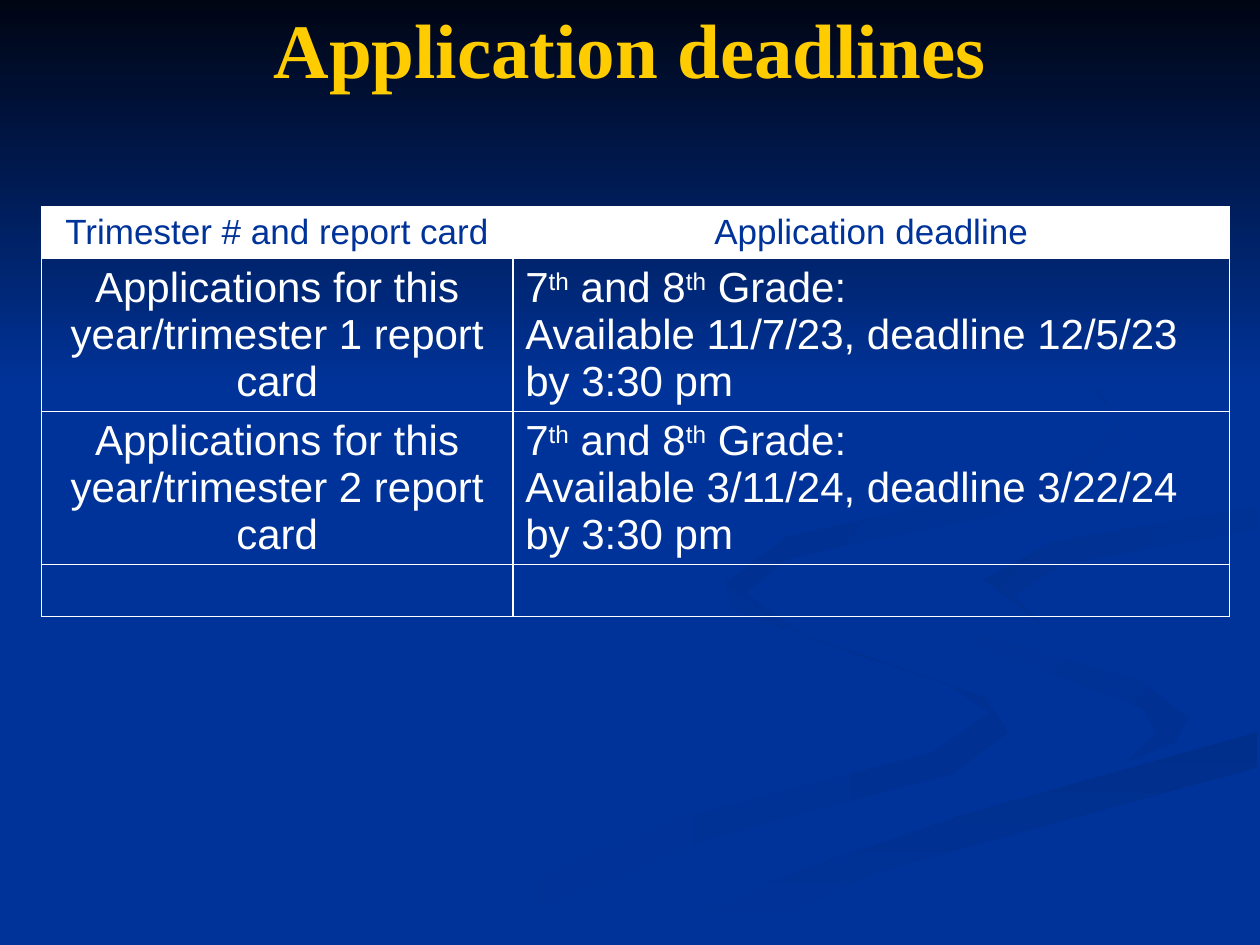
from lxml.etree import SubElement
from pptx import Presentation
from pptx.dml.color import RGBColor
from pptx.enum.shapes import MSO_SHAPE
from pptx.enum.text import MSO_ANCHOR as ANCHOR, PP_ALIGN as ALIGN
from pptx.oxml.ns import qn
from pptx.util import Inches, Pt

COLORS = {"blue": "003399", "night": "000514", "white": "FFFFFF", "gold": "FFCC00",
          "shade1": "003092", "shade2": "002E8B", "shade3": "003090", "shade4": "002F8D"}

TITLE = "Application deadlines"
HEADER = ["Trimester # and report card", "Application deadline"]
# Text between carets is superscript.
GRADES = "7^th^ and 8^th^ Grade:"
TRIMESTERS = [
    (1, "11/7/23", "12/5/23"),
    (2, "3/11/24", "3/22/24"),
]
COL_WIDTHS = [3.74, 5.69]
ROW_HEIGHTS = [0.41, 1.21, 1.21, 0.41]

# Ribbons, back to front: (first color, last color, clockwise angle, outline)
RIBBONS = [
    ("blue", "shade1", 0, [
        (7.81, 5.53), (6.42, 5.07), (5.75, 4.59), (5.81, 4.84), (7.52, 5.43), (7.86, 5.66),
        (7.39, 5.98), (5.39, 6.49), (3, 7.49), (3.61, 7.49), (5.64, 6.65), (7.56, 6.14),
        (8, 5.81)]),
    ("blue", "shade1", 45, [
        (9.43, 5.7), (9.05, 5.4), (7.58, 4.98), (7.24, 4.64), (7.46, 5), (8.38, 5.36),
        (9.07, 5.62), (9.18, 5.81), (8.94, 6.05), (9.32, 5.89)]),
    ("shade2", "blue", 90, [
        (5.03, 7.49), (5.71, 7.49), (6.95, 6.92), (9.98, 6.09), (9.98, 5.81), (7.64, 6.47),
        (6.3, 6.93)]),
    ("shade3", "blue", 45, [
        (7.81, 4.6), (8.26, 4.96), (8.05, 4.72), (8.43, 4.48), (9.98, 4.2), (9.98, 4.02),
        (8.35, 4.3)]),
    ("shade4", "blue", 45, [
        (6.83, 4.3), (8.25, 4.02), (8.94, 3.44), (8.43, 2.75), (7.62, 2.33), (8.62, 2.92),
        (8.89, 3.35), (8.42, 3.78), (6.25, 4.26), (5.77, 4.62), (6.22, 5), (5.93, 4.7),
        (6.24, 4.44)]),
]


def rgb(name):
    return RGBColor.from_string(COLORS[name])


def paint(s, first, last, angle):
    """Give a shape a linear gradient, without line or shadow."""
    s.shadow.inherit = False
    s.line.fill.background()
    s.fill.gradient()
    s.fill.gradient_angle = (360 - angle) % 360
    for stop, name in zip(s.fill.gradient_stops, (first, last)):
        stop.color.rgb = rgb(name)


def write(tf, text, size=24, font="Arial", color="white", bold=False, align=ALIGN.LEFT):
    for i, line in enumerate(text.split("\n")):
        p = tf.paragraphs[0] if i == 0 else tf.add_paragraph()
        p.alignment = align
        for j, part in enumerate(line.split("^")):
            r = p.add_run()
            r.text = part
            r.font.size, r.font.name, r.font.bold = Pt(size), font, bold
            r.font.color.rgb = rgb(color)
            if j % 2:
                r.font._element.set("baseline", "30000")


def add_borders(cell):
    tc_pr = cell._tc.get_or_add_tcPr()
    for side in ("a:lnL", "a:lnR", "a:lnT", "a:lnB"):
        ln = SubElement(tc_pr, qn(side), w=str(Pt(1)))
        SubElement(SubElement(ln, qn("a:solidFill")), qn("a:srgbClr"), val=COLORS["white"])


def add_backdrop(slide):
    slide.background.fill.solid()
    slide.background.fill.fore_color.rgb = rgb("blue")
    for first, last, angle, outline in RIBBONS:
        start, *rest = [(Inches(x), Inches(y)) for x, y in outline]
        builder = slide.shapes.build_freeform(*start)
        builder.add_line_segments(rest, close=True)
        paint(builder.convert_to_shape(), first, last, angle)
    sky = slide.shapes.add_shape(MSO_SHAPE.RECTANGLE, 0, 0, Inches(10), Inches(3.08))
    paint(sky, "night", "blue", 90)


def add_deadlines(slide):
    rows = [HEADER]
    for number, opens, closes in TRIMESTERS:
        rows.append([f"Applications for this year/trimester {number} report card",
                     f"{GRADES}\nAvailable {opens}, deadline {closes} by 3:30 pm"])
    rows.append(["", ""])
    table = slide.shapes.add_table(len(rows), len(COL_WIDTHS), Inches(0.33), Inches(1.64),
                                   Inches(sum(COL_WIDTHS)), Inches(sum(ROW_HEIGHTS))).table
    table.first_row = table.horz_banding = False
    for column, width in zip(table.columns, COL_WIDTHS):
        column.width = Inches(width)
    for i, (row, height) in enumerate(zip(rows, ROW_HEIGHTS)):
        table.rows[i].height = Inches(height)
        for j, text in enumerate(row):
            cell = table.cell(i, j)
            add_borders(cell)
            if i == 0:
                cell.fill.solid()
                cell.fill.fore_color.rgb = rgb("white")
                write(cell.text_frame, text, size=20, color="blue", align=ALIGN.CENTER)
                continue
            cell.fill.background()
            cell.vertical_anchor = ANCHOR.MIDDLE
            if text:
                write(cell.text_frame, text, align=ALIGN.LEFT if j else ALIGN.CENTER)


def main():
    prs = Presentation()
    prs.slide_width, prs.slide_height = Inches(10), Inches(7.5)
    slide = prs.slides.add_slide(prs.slide_layouts[6])
    add_backdrop(slide)
    add_deadlines(slide)
    tf = slide.shapes.add_textbox(Inches(0.5), 0, Inches(9), Inches(0.75)).text_frame
    tf.word_wrap = True
    tf.vertical_anchor = ANCHOR.MIDDLE
    write(tf, TITLE, size=44, font="Times New Roman", color="gold", bold=True,
          align=ALIGN.CENTER)
    prs.save("out.pptx")


if __name__ == "__main__":
    main()
